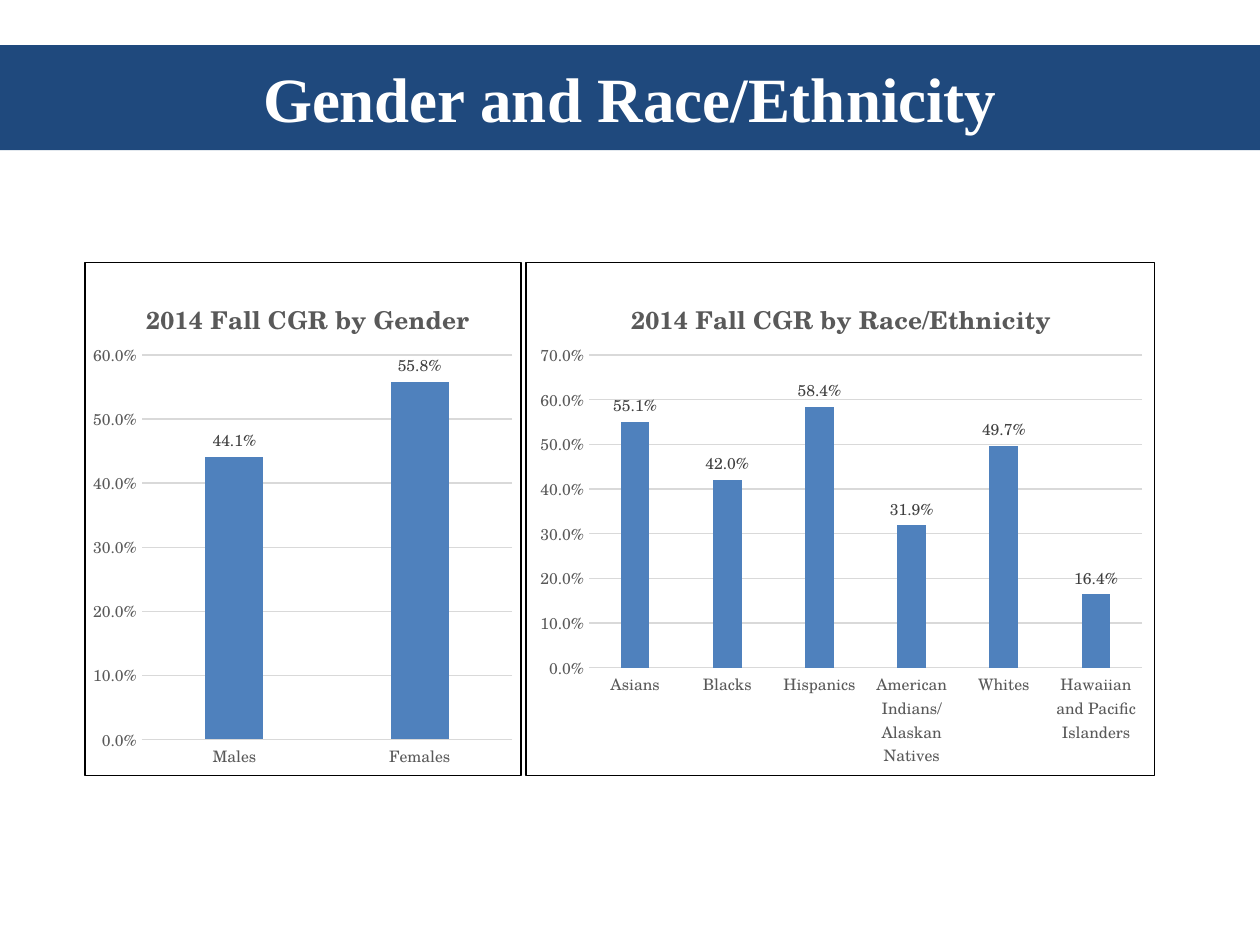
from lxml.etree import SubElement
from pptx import Presentation
from pptx.chart.data import CategoryChartData
from pptx.dml.color import RGBColor
from pptx.enum.chart import XL_CHART_TYPE, XL_LABEL_POSITION, XL_TICK_MARK
from pptx.enum.text import MSO_ANCHOR, MSO_AUTO_SIZE, PP_ALIGN
from pptx.oxml import parse_xml
from pptx.oxml.ns import nsdecls, qn
from pptx.util import Inches, Pt

COLORS = {"band": "1F497D", "white": "FFFFFF", "bar": "4F81BD", "grid": "D9D9D9",
          "axis": "595959", "label": "404040", "black": "000000"}
TITLE_FONT = "Times New Roman"
CHART_FONT = "TeX Gyre Schola"
PERCENT = "0.0%"
CHART_TOP, CHART_HEIGHT = 2.08, 4.08
TITLE_Y, PLOT_Y = 0.06, 0.18

GENDER = {"Males": 0.441, "Females": 0.558}
ETHNICITY = {"Asians": 0.551, "Blacks": 0.42, "Hispanics": 0.584,
             "American Indians/ Alaskan Natives": 0.319, "Whites": 0.497,
             "Hawaiian and Pacific Islanders": 0.164}


def rgb(name):
    return RGBColor.from_string(COLORS[name])


def style_font(font, face, size, color, bold=False):
    font.name, font.size, font.bold = face, Pt(size), bold
    font.color.rgb = rgb(color)


def style_line(line, color):
    line.color.rgb = rgb(color)
    line.width = Pt(0.75)


def add_title(slide, text):
    title = slide.shapes.title
    title.left, title.top = Inches(0), Inches(0.42)
    title.width, title.height = Inches(10), Inches(0.71)
    title.fill.solid()
    title.fill.fore_color.rgb = rgb("band")
    frame = title.text_frame
    frame.auto_size = MSO_AUTO_SIZE.SHAPE_TO_FIT_TEXT
    frame.vertical_anchor = MSO_ANCHOR.MIDDLE
    paragraph = frame.paragraphs[0]
    paragraph.alignment = PP_ALIGN.CENTER
    run = paragraph.add_run()
    run.text = text
    style_font(run.font, TITLE_FONT, 36, "white", True)


def place(parent, index, inner=False, **shares):
    """Set a manual layout, in shares of the chart's size, as child number index."""
    for old in parent.findall(qn("c:layout")):
        parent.remove(old)
    layout = parse_xml(f"<c:layout {nsdecls('c')}/>")
    manual = SubElement(layout, qn("c:manualLayout"))
    settings = {"layoutTarget": "inner"} if inner else {}
    settings |= {"xMode": "edge", "yMode": "edge"} | shares
    for tag, value in settings.items():
        SubElement(manual, qn(f"c:{tag}")).set("val", str(value))
    parent.insert(index, layout)


def add_border(chart):
    border = parse_xml(
        f'<c:spPr {nsdecls("c", "a")}>'
        f'<a:solidFill><a:srgbClr val="{COLORS["white"]}"/></a:solidFill>'
        f'<a:ln w="{Pt(0.75)}"><a:solidFill><a:srgbClr val="{COLORS["black"]}"/>'
        '</a:solidFill></a:ln></c:spPr>')
    chart._chartSpace.find(qn("c:chart")).addnext(border)


def style_axes(chart, maximum):
    for axis in (chart.category_axis, chart.value_axis):
        axis.major_tick_mark = axis.minor_tick_mark = XL_TICK_MARK.NONE
        style_font(axis.tick_labels.font, CHART_FONT, 9, "axis")
    style_line(chart.category_axis.format.line, "grid")
    values = chart.value_axis
    values.minimum_scale, values.maximum_scale, values.major_unit = 0, maximum, 0.1
    values.format.line.fill.background()
    style_line(values.major_gridlines.format.line, "grid")
    values.tick_labels.number_format = PERCENT
    values.tick_labels.number_format_is_linked = False


def style_bars(plot):
    plot.gap_width, plot.overlap, plot.vary_by_categories = 219, -27, False
    bars = plot.series[0]
    bars.format.fill.solid()
    bars.format.fill.fore_color.rgb = rgb("bar")
    labels = bars.data_labels
    labels.show_value = True
    labels.position = XL_LABEL_POSITION.OUTSIDE_END
    labels.number_format, labels.number_format_is_linked = PERCENT, False
    style_font(labels.font, CHART_FONT, 9, "label")


def add_rate_chart(slide, heading, rates, left, width, maximum, title_x, plot_area):
    data = CategoryChartData(number_format=PERCENT)
    data.categories = list(rates)
    data.add_series("Series 1", list(rates.values()))
    chart = slide.shapes.add_chart(
        XL_CHART_TYPE.COLUMN_CLUSTERED, Inches(left), Inches(CHART_TOP),
        Inches(width), Inches(CHART_HEIGHT), data).chart
    style_font(chart.font, CHART_FONT, 10, "black")
    chart.has_legend = False
    run = chart.chart_title.text_frame.paragraphs[0].add_run()
    run.text = heading
    style_font(run.font, CHART_FONT, 14, "axis", True)
    place(chart.chart_title._element, 1, x=title_x, y=TITLE_Y)
    x, w, h = plot_area
    place(chart._chartSpace.chart.plotArea, 0, inner=True, x=x, y=PLOT_Y, w=w, h=h)
    style_axes(chart, maximum)
    style_bars(chart.plots[0])
    add_border(chart)


def main():
    deck = Presentation()
    deck.slide_width, deck.slide_height = Inches(10), Inches(7.5)
    slide = deck.slides.add_slide(deck.slide_layouts[5])
    add_title(slide, "Gender and Race/Ethnicity")
    add_rate_chart(slide, "2014 Fall CGR by Gender", GENDER, 0.67, 3.47, 0.6,
                   0.13, (0.13, 0.85, 0.75))
    add_rate_chart(slide, "2014 Fall CGR by Race/Ethnicity", ETHNICITY, 4.17, 5, 0.7,
                   0.16, (0.1, 0.88, 0.61))
    deck.save("out.pptx")


if __name__ == "__main__":
    main()
